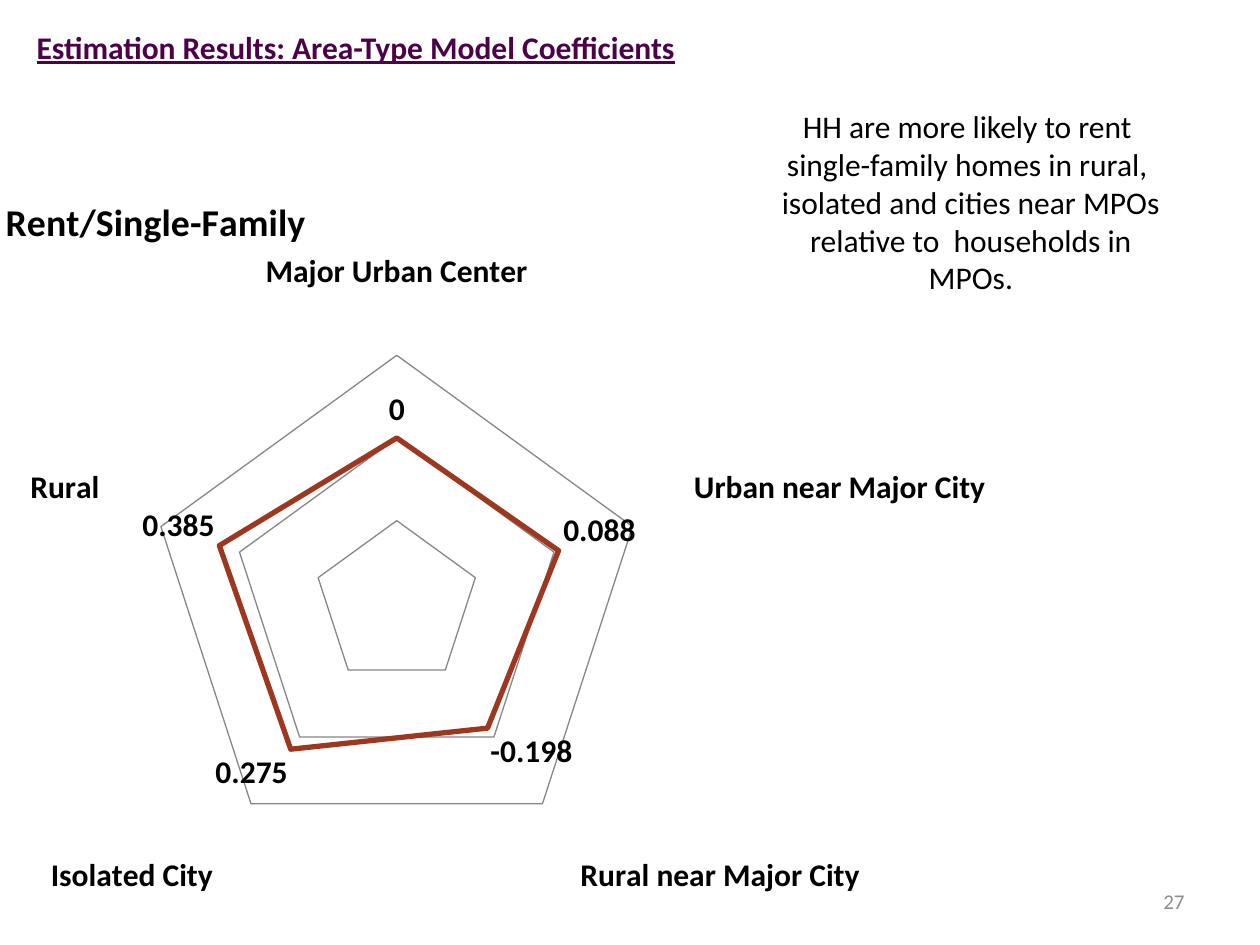
import pptx
import pptx.chart.data
import pptx.dml.color
import pptx.enum.chart
import pptx.enum.text
import pptx.oxml
import pptx.oxml.ns
import pptx.util

WIDTH, HEIGHT = 10, 7.5
FONT = "Calibri"
COLORS = {
    "heading": "4C0248",
    "text": "000000",
    "number": "8C8C8C",
    "grid": "868686",
    "series": "9D3720",
}
COEFFICIENTS = {
    "Major Urban Center": 0,
    "Urban near Major City": 0.088,
    "Rural near Major City": -0.198,
    "Isolated City": 0.275,
    "Rural": 0.385,
}
FINDINGS = [
    "HH are more likely to rent ",
    "single-family homes in rural, ",
    "isolated and cities near MPOs relative to  households in MPOs.",
]
ALIGN = pptx.enum.text.PP_ALIGN
ANCHOR = pptx.enum.text.MSO_ANCHOR


def rgb(name):
    return pptx.dml.color.RGBColor.from_string(COLORS[name])


def box(left, top, width, height):
    """Turn shares of the slide's size into lengths."""
    return [pptx.util.Inches(share * side) for share, side in
            zip((left, top, width, height), (WIDTH, HEIGHT, WIDTH, HEIGHT))]


def style_font(font, size, color, bold=False):
    font.name = FONT
    font.size = pptx.util.Pt(size)
    font.bold = bold
    font.color.rgb = rgb(color)


def write(frame, lines, size, color, align, anchor=ANCHOR.TOP, bold=False, underline=False):
    frame.auto_size = pptx.enum.text.MSO_AUTO_SIZE.NONE
    frame.vertical_anchor = anchor
    for index, line in enumerate(lines):
        paragraph = frame.add_paragraph() if index else frame.paragraphs[0]
        paragraph.alignment = align
        run = paragraph.add_run()
        run.text = line
        style_font(run.font, size, color, bold)
        run.font.underline = underline


def add_heading(slide, text, place):
    heading = slide.shapes.title
    heading.left, heading.top, heading.width, heading.height = box(*place)
    heading.text_frame.word_wrap = False
    write(heading.text_frame, [text], 18, "heading", ALIGN.LEFT, bold=True, underline=True)


def add_text(slide, lines, place, size, color, align, anchor=ANCHOR.TOP):
    frame = slide.shapes.add_textbox(*box(*place)).text_frame
    frame.word_wrap = True
    write(frame, lines, size, color, align, anchor)


def set_layout(element, position, inner=False, **shares):
    """Place a chart part by shares of the chart's size."""
    for old in element.findall(pptx.oxml.ns.qn("c:layout")):
        element.remove(old)
    target = '<c:layoutTarget val="inner"/>' if inner else ""
    modes = "".join(f'<c:{side}Mode val="edge"/>' for side in "xy")
    values = "".join(f'<c:{key} val="{share}"/>' for key, share in shares.items())
    element.insert(position, pptx.oxml.parse_xml(
        f'<c:layout {pptx.oxml.ns.nsdecls("c")}><c:manualLayout>'
        f"{target}{modes}{values}</c:manualLayout></c:layout>"))


def add_radar(slide, title, coefficients, place):
    data = pptx.chart.data.CategoryChartData(number_format="General")
    data.categories = list(coefficients)
    data.add_series("Series 1", list(coefficients.values()))
    chart = slide.shapes.add_chart(
        pptx.enum.chart.XL_CHART_TYPE.RADAR, *box(*place), data).chart
    chart.has_legend = False
    style_font(chart.font, 18, "text", bold=True)

    chart.has_title = True
    heading = chart.chart_title.text_frame.paragraphs[0].add_run()
    heading.text = title
    style_font(heading.font, 21.6, "text", bold=True)
    set_layout(chart.chart_title._element, 1, x=0, y=0.11)
    set_layout(chart._chartSpace.chart.plotArea, 0, inner=True,
               x=0.12, y=0.27, w=0.54, h=0.65)

    scale = chart.value_axis
    scale.minimum_scale, scale.maximum_scale, scale.major_unit = -3, 2, 1.5
    scale.has_major_gridlines = True
    scale.major_gridlines.format.line.color.rgb = rgb("grid")
    scale.major_gridlines.format.line.width = pptx.util.Pt(0.75)
    scale.visible = False

    plot = chart.plots[0]
    plot.vary_by_categories = False
    plot.has_data_labels = True
    plot.data_labels.show_value = True
    style_font(plot.data_labels.font, 18, "text", bold=True)
    series = plot.series[0]
    series.smooth = False
    series.marker.style = pptx.enum.chart.XL_MARKER_STYLE.NONE
    series.format.line.color.rgb = rgb("series")
    series.format.line.width = pptx.util.Pt(3)


def main():
    deck = pptx.Presentation()
    deck.slide_width = pptx.util.Inches(WIDTH)
    deck.slide_height = pptx.util.Inches(HEIGHT)
    slide = deck.slides.add_slide(deck.slide_layouts.get_by_name("Title Only"))
    add_heading(slide, "Estimation Results: Area-Type Model Coefficients",
                (0.019, 0.023, 0.534, 0.053))
    add_text(slide, ["27"], (0.717, 0.927, 0.233, 0.053), 12, "number",
             ALIGN.RIGHT, ANCHOR.MIDDLE)
    add_radar(slide, "Rent/Single-Family", COEFFICIENTS, (-0.001, 0.1, 0.81, 0.905))
    add_text(slide, FINDINGS, (0.6, 0.107, 0.341, 0.216), 18, "text", ALIGN.CENTER)
    deck.save("out.pptx")


if __name__ == "__main__":
    main()
